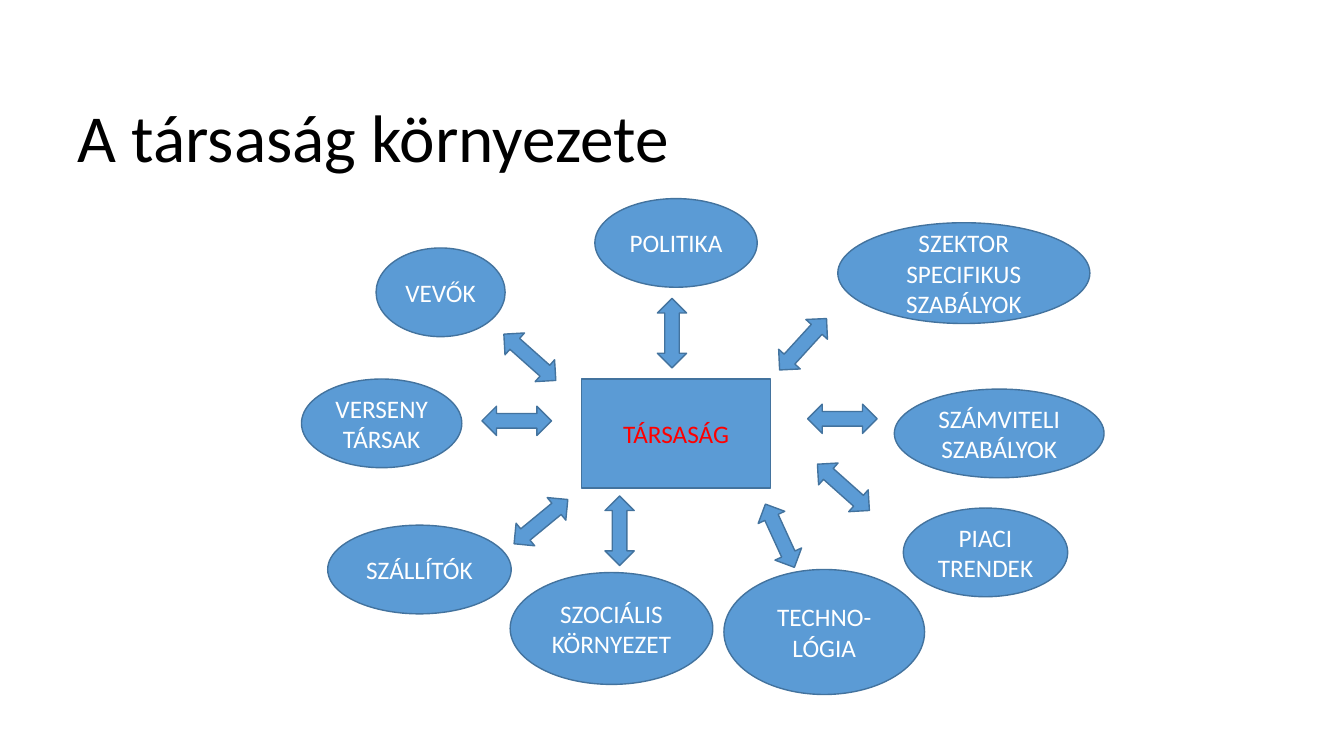
"""Build the slide on a company and its environment."""
from dataclasses import dataclass

from pptx import Presentation
from pptx.dml.color import RGBColor
from pptx.enum.shapes import MSO_SHAPE
from pptx.enum.text import MSO_ANCHOR, MSO_AUTO_SIZE, PP_ALIGN
from pptx.util import Inches, Pt


@dataclass(frozen=True)
class Theme:
    """Colours, type sizes and line width of the slide."""
    font: str = "Calibri"
    title_size: int = 48
    label_size: int = 18
    line_width: int = 1
    fill: str = "5B9BD5"
    line: str = "43739E"
    title: str = "000000"
    label: str = "FFFFFF"
    accent: str = "FF0000"


THEME = Theme()
COLS, ROWS = 133.3, 75
CELL = Inches(0.1)
ARROW_SIZE = (6.9, 2.9)
COMPANY_BOX = (57.7, 37.6, 18.7, 10.8)

# label, ellipse (column, row, columns, rows), arrow centre, arrow angle
FACTORS = [
    ("POLITIKA", (59, 19.7, 16.1, 8.8), (66.65, 33.05), 90),
    ("SZEKTOR SPECIFIKUS SZABÁLYOK", (83.1, 22.1, 25, 10), (79.65, 34.15), 132.4),
    ("SZÁMVITELI SZABÁLYOK", (88.7, 38.6, 20.8, 8.8), (83.55, 41.55), 0),
    ("PIACI TRENDEK", (89.6, 50.4, 16.3, 8.8), (83.65, 48.35), 41.7),
    ("TECHNO-LÓGIA", (71.8, 56.5, 19.9, 12.4), (77.35, 53.15), 65.4),
    ("SZOCIÁLIS KÖRNYEZET", (50.6, 56.8, 20.1, 11.1), (61.45, 52.65), 90),
    ("SZÁLLÍTÓK", (32.5, 52.1, 18.2, 8.8), (53.65, 51.75), 320.5),
    ("VERSENYTÁRSAK", (29.9, 37.6, 15.9, 8.8), (51.25, 41.75), 0),
    ("VEVŐK", (37.3, 24.6, 12.8, 8.8), (52.55, 35.45), 41.7),
]


def to_emu(box):
    """Turn grid columns and rows into slide lengths."""
    return [round(n * CELL) for n in box]


def write_text(sp, text, size=THEME.label_size, color=THEME.label,
               align=PP_ALIGN.CENTER, spacing=1.0):
    """Write one formatted paragraph, centred vertically in its shape."""
    tf = sp.text_frame
    tf.word_wrap = True
    tf.auto_size = MSO_AUTO_SIZE.NONE
    tf.vertical_anchor = MSO_ANCHOR.MIDDLE
    p = tf.paragraphs[0]
    p.alignment = align
    p.line_spacing = spacing
    r = p.add_run()
    r.text = text
    r.font.name = THEME.font
    r.font.size = Pt(size)
    r.font.color.rgb = RGBColor.from_string(color)


def add_title(slide, text):
    """Place and fill the title placeholder."""
    sp = slide.shapes.title
    sp.left, sp.top, sp.width, sp.height = to_emu((6.7, 7.7, 122.5, 12.5))
    write_text(sp, text, size=THEME.title_size, color=THEME.title,
               align=PP_ALIGN.LEFT, spacing=0.9)


def add_figure(slide, kind, box):
    """Add a filled and outlined preset shape."""
    sp = slide.shapes.add_shape(kind, *to_emu(box))
    sp.shadow.inherit = False
    sp.fill.solid()
    sp.fill.fore_color.rgb = RGBColor.from_string(THEME.fill)
    sp.line.color.rgb = RGBColor.from_string(THEME.line)
    sp.line.width = Pt(THEME.line_width)
    return sp


def add_arrow(slide, center, angle):
    """Add a two-way arrow turned about its centre."""
    w, h = ARROW_SIZE
    x, y = center
    sp = add_figure(slide, MSO_SHAPE.LEFT_RIGHT_ARROW, (x - w / 2, y - h / 2, w, h))
    sp.rotation = angle


def main():
    """Build and save the slide."""
    prs = Presentation()
    prs.slide_width, prs.slide_height = to_emu((COLS, ROWS))
    slide = prs.slides.add_slide(prs.slide_layouts.get_by_name("Title Only"))
    add_title(slide, "A társaság környezete")
    company = add_figure(slide, MSO_SHAPE.RECTANGLE, COMPANY_BOX)
    write_text(company, "TÁRSASÁG", color=THEME.accent)
    for label, box, center, angle in FACTORS:
        write_text(add_figure(slide, MSO_SHAPE.OVAL, box), label)
        add_arrow(slide, center, angle)
    prs.save("out.pptx")


if __name__ == "__main__":
    main()
